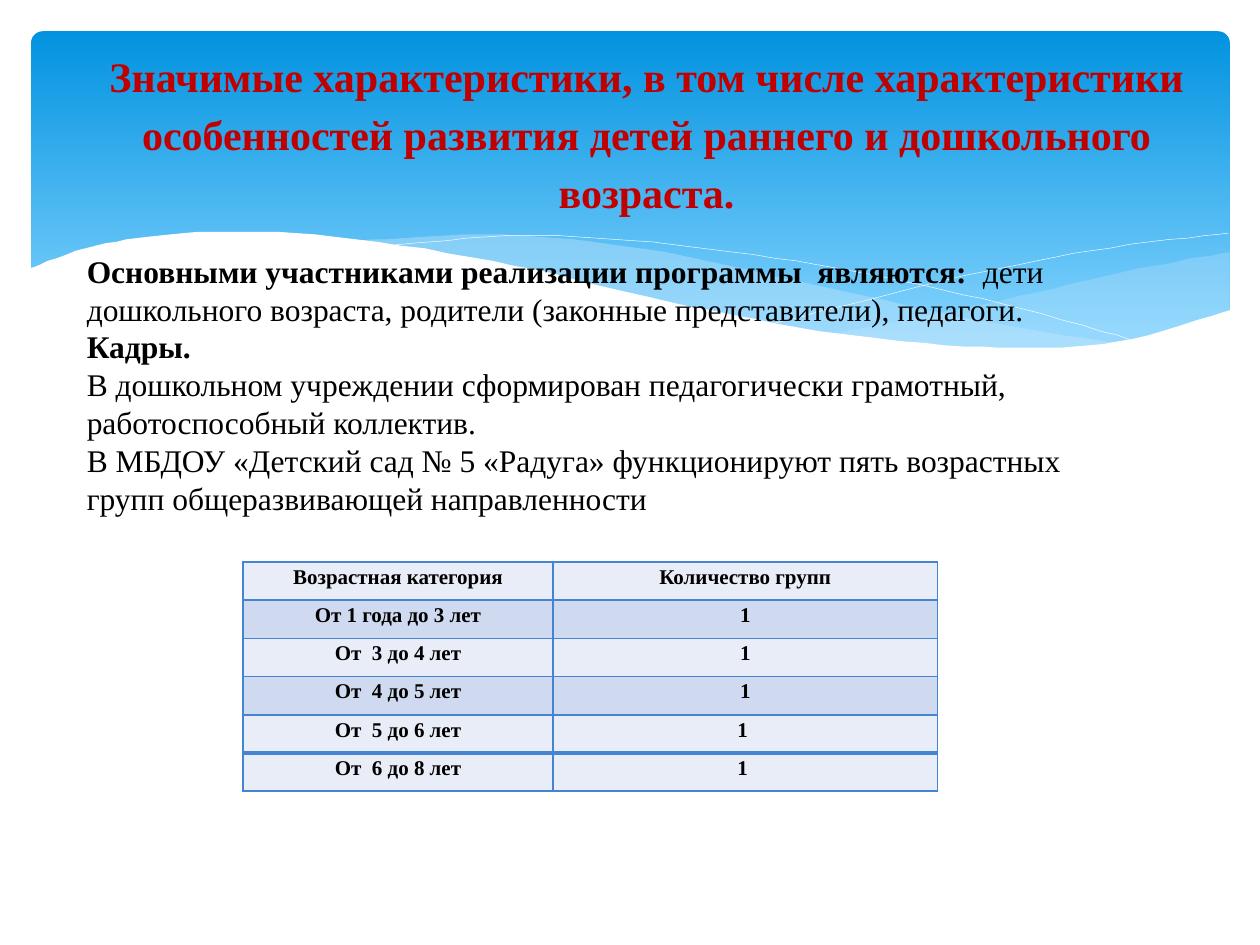
from dataclasses import dataclass
from typing import Optional

from lxml.etree import SubElement as Sub
from pptx import Presentation
from pptx.dml.color import RGBColor
from pptx.enum.shapes import MSO_SHAPE as Form
from pptx.enum.text import PP_ALIGN as Align
from pptx.oxml.ns import qn
from pptx.util import Cm, Pt

WHITE = RGBColor(0xFF, 0xFF, 0xFF)
BLACK = RGBColor(0x00, 0x00, 0x00)
RED = RGBColor(0xC0, 0x00, 0x00)
DEEP = RGBColor(0x02, 0x93, 0xE0)
SKY = RGBColor(0x83, 0xD3, 0xFE)
MIST = RGBColor(0xC6, 0xE7, 0xFC)
EDGE = RGBColor(0x45, 0x84, 0xD3)
PALE = RGBColor(0xE9, 0xED, 0xF7)
BAND = RGBColor(0xCF, 0xD9, 0xEF)
FONT = "Times New Roman"
UNIT = Cm(2.54) / 100  # wave knots are hundredths of an inch
STEPS = 8  # straight pieces between two knots

Knots = list[tuple[int, int]]


@dataclass
class Wave:
    edges: list[Knots]  # each edge is drawn as a smooth curve
    fill: Optional[RGBColor] = None
    alpha: int = 100  # per cent


@dataclass
class Row:
    age: str
    count: str
    fill: RGBColor
    top: float = 1  # width of the upper border, points


WAVES = [
    Wave([[(976, 200), (891, 216), (779, 242), (661, 265)],
          [(661, 265), (745, 275), (814, 278), (889, 272), (976, 247)]],
         MIST, 29),
    Wave([[(893, 273), (775, 254), (629, 222), (514, 198), (399, 186),
           (286, 191)],
          [(286, 191), (404, 211), (566, 248), (709, 272), (807, 278),
           (893, 273)]], MIST, 40),
    Wave([[(309, 195), (416, 187), (533, 194), (665, 213), (795, 241),
           (907, 272)]]),
    Wave([[(613, 257), (748, 223), (866, 199), (975, 185)]]),
    Wave([[(977, 246), (887, 271), (793, 276), (668, 265), (529, 239),
           (391, 207), (250, 186), (146, 185), (76, 195), (23, 213)],
          [(23, 329), (977, 329)]], WHITE),
]

ROWS = [
    Row("Возрастная категория", "Количество групп", PALE),
    Row("От 1 года до 3 лет", "1", BAND),
    Row("От  3 до 4 лет", "1", PALE),
    Row("От  4 до 5 лет", "1", BAND),
    Row("От  5 до 6 лет", "1 ", PALE),
    Row("От  6 до 8 лет", "1 ", PALE, top=2),
]

TITLE = ("Значимые характеристики, в том числе характеристики особенностей "
         "развития детей раннего и дошкольного возраста.")
# Each paragraph is a list of (text, bold) runs
BODY = [
    [("Основными участниками реализации программы  являются:", True),
     ("  дети дошкольного возраста, родители (законные представители), "
      "педагоги.", False)],
    [("Кадры.", True)],
    [("В дошкольном учреждении сформирован педагогически грамотный, "
      "работоспособный коллектив.", False)],
    [("В МБДОУ «Детский сад № 5 «Радуга» функционируют пять возрастных "
      "групп общеразвивающей направленности", False)],
]


def write(para, text: str, *, size: float, bold: bool = False,
          color: RGBColor = BLACK, align=Align.LEFT, space: float = 1.0) -> None:
    para.alignment, para.line_spacing = align, space
    run = para.add_run()
    run.text = text
    font = run.font
    font.name, font.size, font.bold = FONT, Pt(size), bold
    font.color.rgb = color


def add_box(slide, x: float, y: float, w: float, h: float):
    frame = slide.shapes.add_textbox(Cm(x), Cm(y), Cm(w), Cm(h)).text_frame
    frame.word_wrap = True
    return frame


def add_panel(slide) -> None:
    panel = slide.shapes.add_shape(Form.ROUNDED_RECTANGLE, Cm(0.63), Cm(0.63),
                                   Cm(24.16), Cm(6.86))
    panel.adjustments[0] = 0.034
    panel.shadow.inherit = False
    panel.line.fill.background()
    panel.fill.gradient()
    panel.fill.gradient_angle = 270
    for stop, color, pos in zip(panel.fill.gradient_stops, (DEEP, SKY), (0, 0.9)):
        stop.color.rgb, stop.position = color, pos


def blend(a: float, b: float, c: float, d: float, t: float) -> float:
    """Catmull-Rom value between b and c."""
    return b + t / 2 * (c - a + t * (2 * a - 5 * b + 4 * c - d
                                     + t * (3 * (b - c) + d - a)))


def smooth(knots: Knots) -> list[tuple[float, float]]:
    ends = [knots[0], *knots, knots[-1]]
    curve = [tuple(blend(*axis, step / STEPS) for axis in zip(*ends[i:i + 4]))
             for i in range(len(knots) - 1) for step in range(STEPS)]
    return [*curve, knots[-1]]


def add_wave(slide, wave: Wave) -> None:
    start, *rest = [point for edge in wave.edges for point in smooth(edge)]
    pen = slide.shapes.build_freeform(*start, scale=UNIT)
    pen.add_line_segments(rest, close=wave.fill is not None)
    shape = pen.convert_to_shape()
    shape.shadow.inherit = False
    if wave.fill is None:
        shape.fill.background()
        shape.line.color.rgb = WHITE
        shape.line.width = Pt(0.25)
        return
    shape.line.fill.background()
    shape.fill.solid()
    shape.fill.fore_color.rgb = wave.fill
    if wave.alpha < 100:
        tint = shape.element.spPr.find(".//" + qn("a:srgbClr"))
        Sub(tint, qn("a:alpha"), val=str(wave.alpha * 1000))


def set_edges(cell, top: float) -> None:
    props = cell._tc.get_or_add_tcPr()
    for at, (side, width) in enumerate(zip("LRTB", (1, 1, top, 1))):
        line = Sub(props, qn(f"a:ln{side}"), w=str(Pt(width)))
        fill = Sub(line, qn("a:solidFill"))
        Sub(fill, qn("a:srgbClr"), val=str(EDGE))
        props.insert(at, line)  # borders come before the fill


def add_grid(slide, rows: list[Row]) -> None:
    grid = slide.shapes.add_table(len(rows), 2, Cm(4.9), Cm(11.33),
                                  Cm(14), Cm(0.77 * len(rows))).table
    grid.first_row = grid.horz_banding = False
    for col, width in zip(grid.columns, (6.25, 7.75)):
        col.width = Cm(width)
    for i, row in enumerate(rows):
        for j, text in enumerate((row.age, row.count)):
            cell = grid.cell(i, j)
            cell.margin_left = cell.margin_right = Cm(0.18)
            cell.margin_top = cell.margin_bottom = 0
            cell.fill.solid()
            cell.fill.fore_color.rgb = row.fill
            set_edges(cell, row.top)
            write(cell.text_frame.paragraphs[0], text, size=12, bold=True,
                  align=Align.CENTER, space=1.15)


def main() -> None:
    deck = Presentation()
    deck.slide_width, deck.slide_height = Cm(25.4), Cm(19.05)
    slide = deck.slides.add_slide(deck.slide_layouts[6])

    # Blue header with waves
    add_panel(slide)
    for wave in WAVES:
        add_wave(slide, wave)

    # Age groups
    add_grid(slide, ROWS)

    # Title
    title = add_box(slide, 0.5, 0.74, 23.8, 3.78)
    title.margin_left = Cm(1.52)
    write(title.paragraphs[0], TITLE, size=24, bold=True, color=RED,
          align=Align.CENTER, space=1.15)

    # Main text
    body = add_box(slide, 1.5, 4.95, 21.41, 6.4)
    for i, runs in enumerate(BODY):
        para = body.add_paragraph() if i else body.paragraphs[0]
        for text, bold in runs:
            write(para, text, size=18, bold=bold)

    deck.save("out.pptx")


if __name__ == "__main__":
    main()
